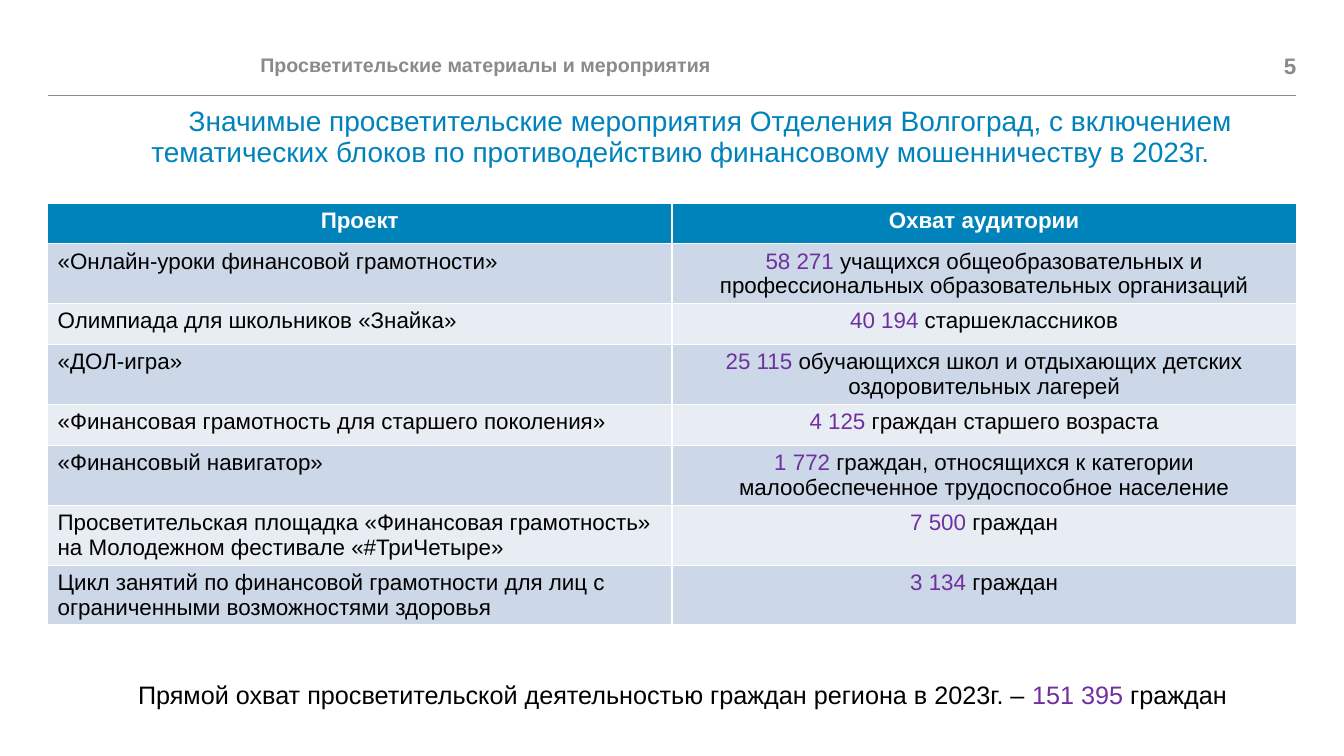
from lxml.etree import SubElement
from pptx import Presentation
from pptx.dml.color import RGBColor
from pptx.enum.shapes import MSO_CONNECTOR
from pptx.enum.text import MSO_ANCHOR, MSO_AUTO_SIZE, PP_ALIGN
from pptx.oxml.ns import qn
from pptx.util import Pt

COLORS = {"blue": "0082BB", "gray": "888A8D", "purple": "7030A0", "black": "000000",
          "white": "FFFFFF", "dark band": "CCD8E7", "light band": "E7EDF3"}
FONT = "Arial"

# Content
SECTION = "Просветительские материалы и мероприятия"
PAGE_NUMBER = "5"
TITLE = ("Значимые просветительские мероприятия Отделения Волгоград, с включением "
         "тематических блоков по противодействию финансовому мошенничеству в 2023г.")
HEADINGS = ("Проект", "Охват аудитории")
PROJECTS = [
    ("«Онлайн-уроки финансовой грамотности»", "58 271",
     " учащихся общеобразовательных и профессиональных образовательных организаций"),
    ("Олимпиада для школьников «Знайка»", "40 194 ", "старшеклассников"),
    ("«ДОЛ-игра»", "25 115 ",
     "обучающихся школ и отдыхающих детских оздоровительных лагерей"),
    ("«Финансовая грамотность для старшего поколения»", "4 125 ",
     "граждан старшего возраста"),
    ("«Финансовый навигатор»", "1 772 ",
     "граждан, относящихся к категории малообеспеченное трудоспособное население"),
    ("Просветительская площадка «Финансовая грамотность» на Молодежном фестивале "
     "«#ТриЧетыре»", "7 500 ", "граждан"),
    ("Цикл занятий по финансовой грамотности для лиц с ограниченными возможностями "
     "здоровья", "3 134 ", "граждан"),
]
TOTAL = [("Прямой охват просветительской деятельностью граждан региона в 2023г. – ", "black"),
         ("151 395 ", "purple"), ("граждан", "black")]

# Layout in points
LEFT, RIGHT = 34, 926
HEADER_TOP, HEADER_HEIGHT, RULE_Y = 34, 25, 68.4
TABLE_TOP, ROW_HEIGHT = 145, 29.2


def rgb(name):
    return RGBColor.from_string(COLORS[name])


def write(para, runs, size, bold=False, align=PP_ALIGN.LEFT):
    para.alignment = align
    for text, color in runs:
        span = para.add_run()
        span.text = text
        for key, value in {"name": FONT, "size": Pt(size), "bold": bold}.items():
            setattr(span.font, key, value)
        span.font.color.rgb = rgb(color)


def set_frame(frame, **extra):
    values = {"margin_left": 0, "margin_top": 0, "margin_right": 0, "margin_bottom": 0,
              "word_wrap": True, "auto_size": MSO_AUTO_SIZE.NONE, **extra}
    for key, value in values.items():
        setattr(frame, key, value)


def place(left, top, width, height):
    return [Pt(value) for value in (left, top, width, height)]


deck = Presentation()
deck.slide_width, deck.slide_height = Pt(960), Pt(540)
page = deck.slides.add_slide(deck.slide_layouts[5])

# Running header with rule
rule = page.shapes.add_connector(MSO_CONNECTOR.STRAIGHT, Pt(LEFT), Pt(RULE_Y),
                                 Pt(RIGHT), Pt(RULE_Y))
rule.line.color.rgb = rgb("gray")
rule.line.width = Pt(0.5)
SubElement(rule._element.spPr, qn("a:effectLst"))

for text, left, width, size, align in [
    (SECTION, 186, 664, 14, PP_ALIGN.LEFT),
    (PAGE_NUMBER, 868, RIGHT - 868, 16, PP_ALIGN.RIGHT),
]:
    box = page.shapes.add_textbox(*place(left, HEADER_TOP, width, HEADER_HEIGHT))
    set_frame(box.text_frame, vertical_anchor=MSO_ANCHOR.MIDDLE)
    write(box.text_frame.paragraphs[0], [(text, "gray")], size, True, align)

# Title
title = page.shapes.title
title.left, title.top, title.width, title.height = place(47, 77, 878.5, 43)
set_frame(title.text_frame, vertical_anchor=MSO_ANCHOR.TOP)
para = title.text_frame.paragraphs[0]
write(para, [(TITLE, "blue")], 20, align=PP_ALIGN.CENTER)
para.line_spacing = 0.9
para._p.get_or_add_pPr().set("indent", str(Pt(42.5)))

# Table of projects
row_count = len(PROJECTS) + 1
table = page.shapes.add_table(row_count, len(HEADINGS), *place(
    LEFT, TABLE_TOP, RIGHT - LEFT, ROW_HEIGHT * row_count)).table
rows = [[[(heading, "white")] for heading in HEADINGS]]
rows += [[[(project, "black")], [(number, "purple"), (audience, "black")]]
         for project, number, audience in PROJECTS]
for row_index, row in enumerate(rows):
    is_header = row_index == 0
    fill = "blue" if is_header else "dark band" if row_index % 2 else "light band"
    for column_index, runs in enumerate(row):
        cell = table.cell(row_index, column_index)
        cell.fill.solid()
        cell.fill.fore_color.rgb = rgb(fill)
        centered = is_header or column_index == 1
        write(cell.text_frame.paragraphs[0], runs, 16, is_header,
              PP_ALIGN.CENTER if centered else PP_ALIGN.LEFT)

# Total
box = page.shapes.add_textbox(*place(91.5, 481.5, 805, 29))
box.text_frame.word_wrap = False
box.text_frame.auto_size = MSO_AUTO_SIZE.SHAPE_TO_FIT_TEXT
write(box.text_frame.paragraphs[0], TOTAL, 18)

deck.save("out.pptx")
